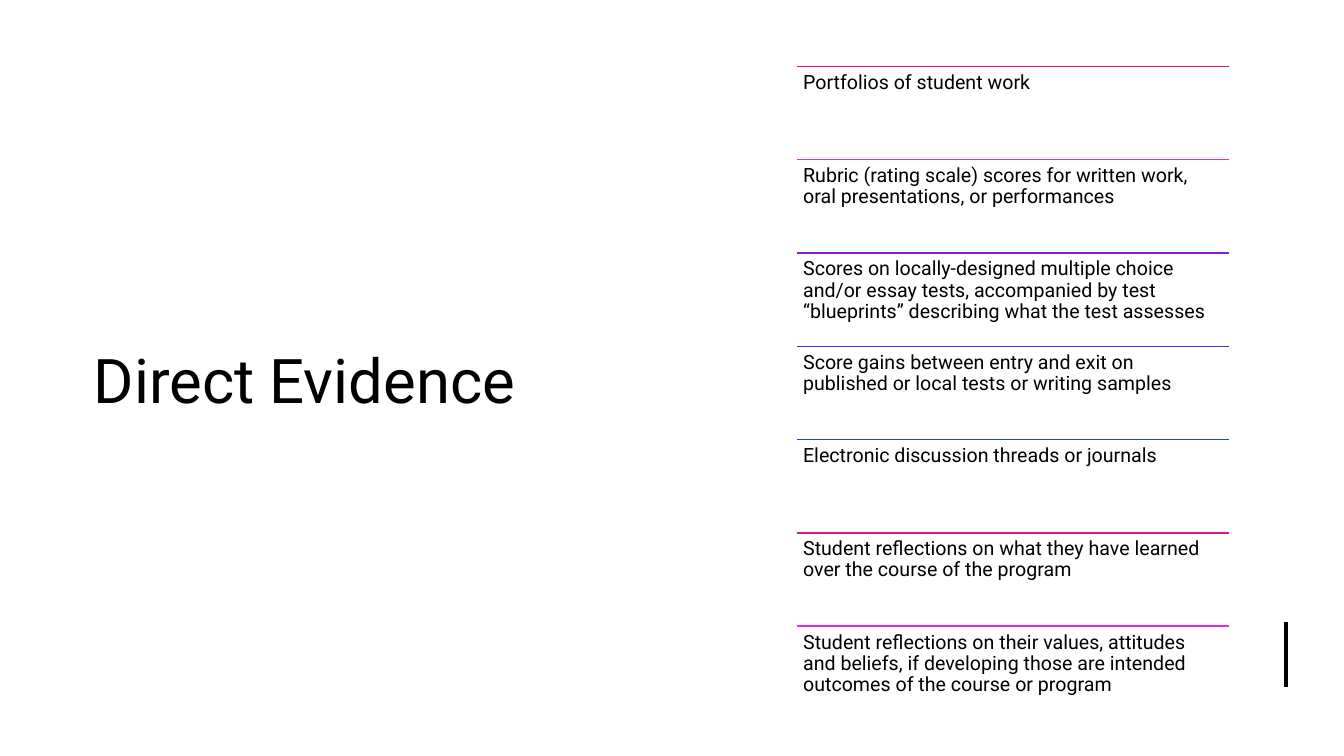
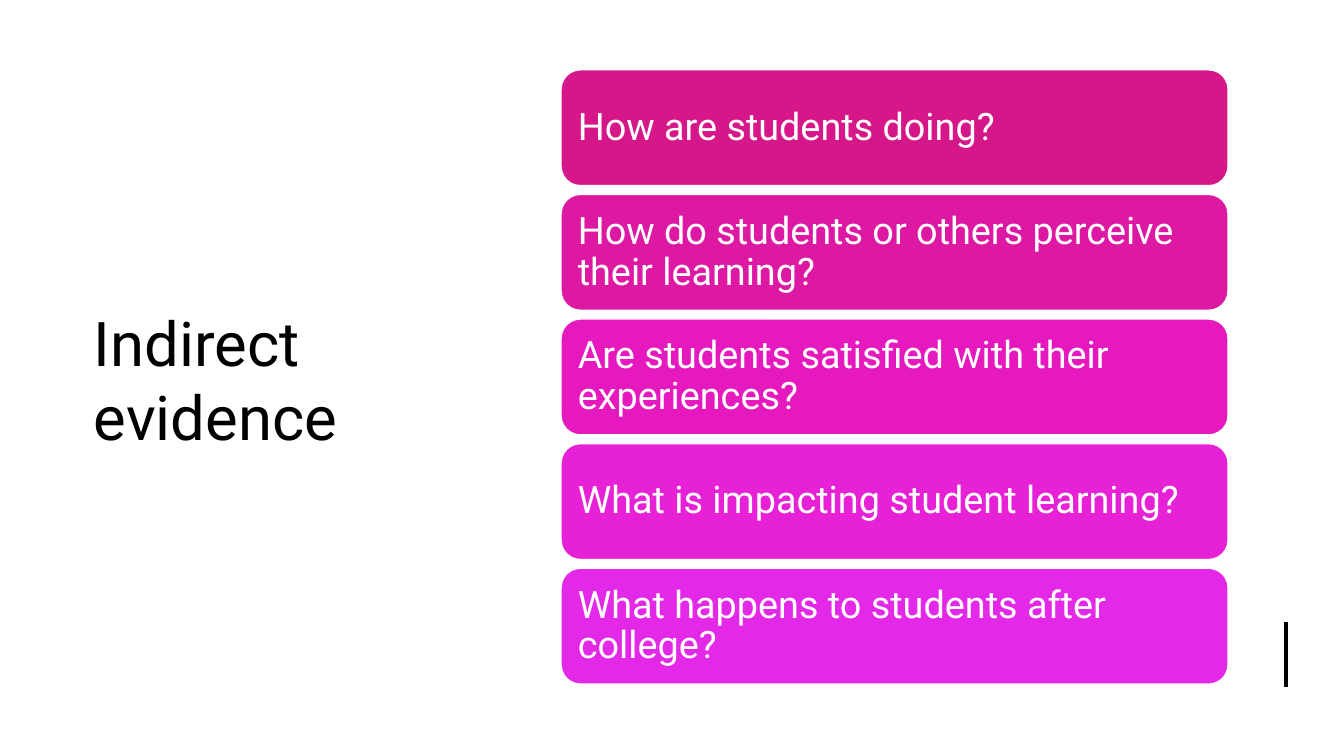
"""Build two slides on direct and indirect evidence of student learning."""
from collections import namedtuple
from itertools import cycle

from lxml import etree
from pptx import Presentation
from pptx import util as u
from pptx.dml import color
from pptx.enum import shapes, text
from pptx.oxml import ns

FONT = "Roboto"
BLACK, WHITE = "000000", "FFFFFF"
RULE_COLOURS = ("D51789", "E329E7", "861ED6", "482CE7", "174AD5")
CARD_COLOURS = ("D51789", "DD18A3", "E519BE", "E621D6", "E329E7")
TITLE_LEFT, TITLE_TOP, TITLE_HEIGHT = 2.11, 2.39, 14.33
BAR_X, BAR_TOP, BAR_BOTTOM = 32.41, 15.67, 17.32

DIRECT_EVIDENCE = (
    "Portfolios of student work",
    "Rubric (rating scale) scores for written work, oral presentations, or performances",
    "Scores on locally-designed multiple choice and/or essay tests, accompanied by "
    "test “blueprints” describing what the test assesses",
    "Score gains between entry and exit on published or local tests or writing samples",
    "Electronic discussion threads or journals",
    "Student reflections on what they have learned over the course of the program",
    "Student reflections on their values, attitudes and beliefs, if developing those "
    "are intended outcomes of the course or program",
)
INDIRECT_EVIDENCE = (
    "How are students doing?",
    "How do students or others perceive their learning?",
    "Are students satisfied with their experiences?",
    "What is impacting student learning?",
    "What happens to students after college?",
)

Box = namedtuple("Box", "left top width height")


def rgb(value):
    """Turn a hex string into a colour."""
    return color.RGBColor.from_string(value)


def lengths(box):
    """Turn a box in centimetres into four lengths."""
    return [u.Cm(value) for value in box]


def split_rows(box, count, gap=0):
    """Divide a box into equal rows with equal gaps."""
    height = (box.height - gap * (count - 1)) / count
    return [Box(box.left, box.top + row * (height + gap), box.width, height)
            for row in range(count)]


def write(shape, wording, size, colour, anchor, spacing=1.0, inset=None):
    """Fill a shape with one left-aligned, formatted paragraph."""
    frame = shape.text_frame
    frame.text = wording
    frame.word_wrap = True
    frame.auto_size = text.MSO_AUTO_SIZE.NONE
    frame.vertical_anchor = anchor
    if inset is not None:
        frame.margin_left = frame.margin_right = u.Cm(inset)
        frame.margin_top = frame.margin_bottom = u.Cm(inset)
    para = frame.paragraphs[0]
    para.alignment = text.PP_ALIGN.LEFT
    para.line_spacing = spacing
    for span in para.runs:
        span.font.name = FONT
        span.font.size = u.Pt(size)
        span.font.color.rgb = rgb(colour)


def add_line(page, start, end, colour, weight):
    """Draw a straight line without a shadow."""
    line = page.shapes.add_connector(
        shapes.MSO_CONNECTOR.STRAIGHT, *lengths(start + end))
    line.line.color.rgb = rgb(colour)
    line.line.width = u.Pt(weight)
    etree.SubElement(line._element.spPr, ns.qn("a:effectLst"))


def add_page(deck, title, title_width):
    """Add a page with the shared title style and accent bar."""
    page = deck.slides.add_slide(deck.slide_layouts[5])
    heading = page.shapes.title
    heading.left, heading.top, heading.width, heading.height = lengths(
        Box(TITLE_LEFT, TITLE_TOP, title_width, TITLE_HEIGHT))
    write(heading, title, 44, BLACK, text.MSO_ANCHOR.MIDDLE)
    add_line(page, (BAR_X, BAR_TOP), (BAR_X, BAR_BOTTOM), BLACK, 3)
    return page


def add_ruled_list(page, box, entries):
    """Stack entries, each under a coloured rule."""
    rows = split_rows(box, len(entries))
    for row, entry, colour in zip(rows, entries, cycle(RULE_COLOURS)):
        add_line(page, (row.left, row.top), (row.left + row.width, row.top), colour, 1)
        label = page.shapes.add_textbox(*lengths(row))
        write(label, entry, 14, BLACK, text.MSO_ANCHOR.TOP, 0.9, 0.15)


def add_cards(page, box, entries):
    """Stack entries as rounded, filled cards."""
    rows = split_rows(box, len(entries), gap=0.22)
    for row, entry, colour in zip(rows, entries, CARD_COLOURS):
        card = page.shapes.add_shape(
            shapes.MSO_SHAPE.ROUNDED_RECTANGLE, *lengths(row))
        card.shadow.inherit = False
        card.fill.solid()
        card.fill.fore_color.rgb = rgb(colour)
        card.line.color.rgb = rgb(WHITE)
        card.line.width = u.Pt(1)
        write(card, entry, 27, WHITE, text.MSO_ANCHOR.MIDDLE, 0.9, 0.28)


def main():
    """Build and save the deck."""
    deck = Presentation()
    deck.slide_width, deck.slide_height = u.Cm(33.87), u.Cm(19.05)
    direct = add_page(deck, "Direct Evidence", 15.06)
    add_ruled_list(direct, Box(20.09, 1.67, 10.87, 16.46), DIRECT_EVIDENCE)
    indirect = add_page(deck, "Indirect evidence", 9.58)
    add_cards(indirect, Box(14.14, 1.76, 16.81, 15.48), INDIRECT_EVIDENCE)
    deck.save("out.pptx")


if __name__ == "__main__":
    main()
